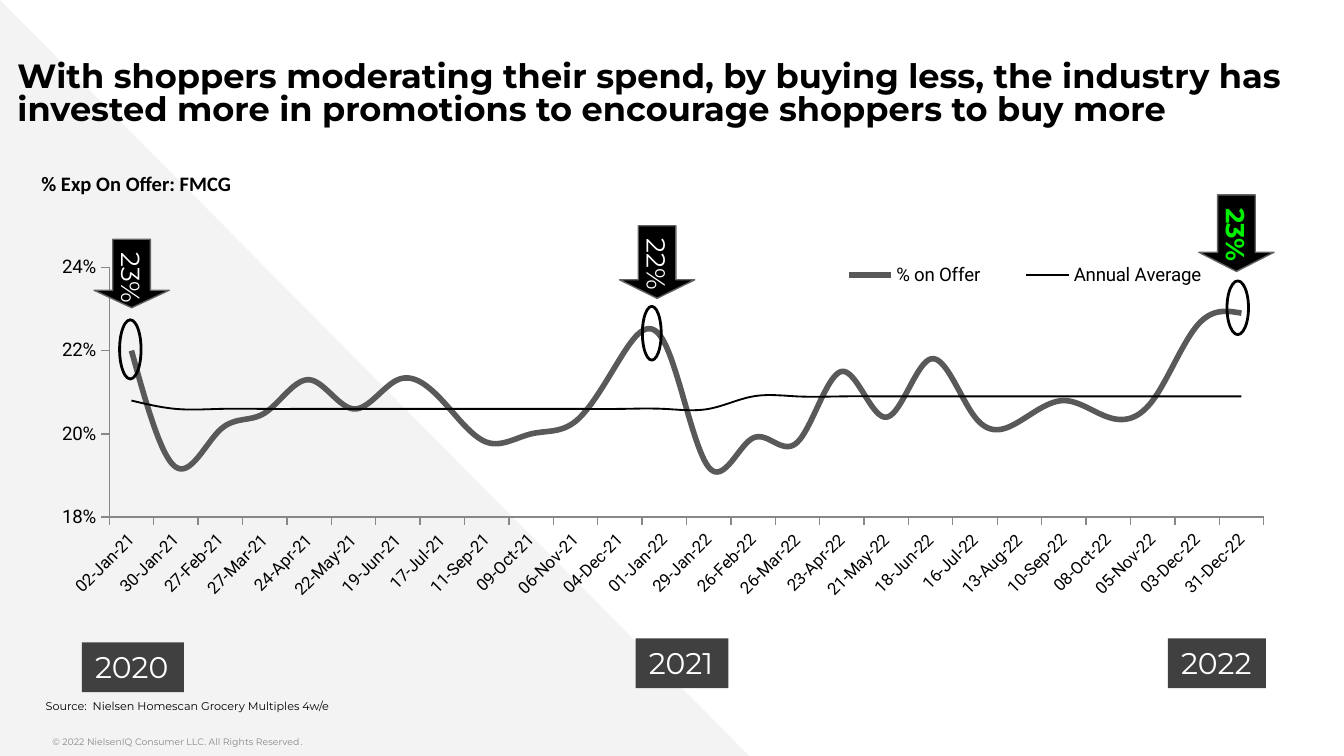
from lxml import etree
from pptx import Presentation
from pptx import util as u
from pptx.chart import data as cd
from pptx.dml.color import RGBColor
from pptx.enum import chart as ch, shapes as sh, text as tx
from pptx.oxml import ns

HUES = {"black": "000000", "white": "FFFFFF", "pale": "F3F3F3", "mute": "888888",
        "line": "595959", "edge": "616365", "tag": "404040", "green": "00F000"}
DATES = """02-Jan-21 30-Jan-21 27-Feb-21 27-Mar-21 24-Apr-21 22-May-21 19-Jun-21
17-Jul-21 11-Sep-21 09-Oct-21 06-Nov-21 04-Dec-21 01-Jan-22 29-Jan-22 26-Feb-22
26-Mar-22 23-Apr-22 21-May-22 18-Jun-22 16-Jul-22 13-Aug-22 10-Sep-22 08-Oct-22
05-Nov-22 03-Dec-22 31-Dec-22""".split()
OFFER = [0.22, 0.192, 0.201, 0.205, 0.213, 0.206, 0.213, 0.208, 0.198, 0.2, 0.203, 0.218, 0.222,
         0.192, 0.199, 0.198, 0.215, 0.204, 0.218, 0.204, 0.203, 0.208, 0.204, 0.208, 0.226, 0.229]
MEAN = [0.208] + [0.206] * 13 + [0.209] * 12


def hue(name):
    return RGBColor.from_string(HUES[name])


def style(font, size, face, color, bold=False):
    font.size, font.name, font.bold = u.Pt(size), face, bold
    font.color.rgb = hue(color)


def add_run(para, words, *look):
    run = para.add_run()
    run.text = words
    style(run.font, *look)


def add_text(slide, box, runs, pads=None, wrap=True, lead=None):
    frame = slide.shapes.add_textbox(*map(u.Inches, box)).text_frame
    frame.word_wrap = wrap
    if pads:
        frame.margin_left, frame.margin_top = map(u.Inches, pads)
        frame.margin_right, frame.margin_bottom = 0, u.Inches(pads[1])
    para = frame.paragraphs[0]
    if lead:
        para.line_spacing = lead
    for run in runs:
        add_run(para, *run)


def add_form(slide, kind, box, fill=None, edge=None, width=0.75):
    form = slide.shapes.add_shape(kind, *map(u.Inches, box))
    form.shadow.inherit = False
    if fill:
        form.fill.solid()
        form.fill.fore_color.rgb = hue(fill)
    else:
        form.fill.background()
    if edge:
        form.line.color.rgb = hue(edge)
        form.line.width = u.Pt(width)
    else:
        form.line.fill.background()
    return form


def add_arrow(slide, box, words, color, bold):
    form = add_form(slide, sh.MSO_SHAPE.DOWN_ARROW, box, "black", "edge")
    form.adjustments[0], form.adjustments[1] = 0.5, 0.255
    frame = form.text_frame
    frame.word_wrap = False
    frame.vertical_anchor = tx.MSO_ANCHOR.MIDDLE
    form.element.txBody.bodyPr.set("vert", "eaVert")
    para = frame.paragraphs[0]
    para.alignment = tx.PP_ALIGN.CENTER
    add_run(para, words, 14, "Montserrat", color, bold)


def add_year(slide, box, words):
    form = add_form(slide, sh.MSO_SHAPE.RECTANGLE, box, "tag")
    frame = form.text_frame
    frame.word_wrap = False
    frame.vertical_anchor = tx.MSO_ANCHOR.TOP
    para = frame.paragraphs[0]
    para.alignment = tx.PP_ALIGN.LEFT
    add_run(para, words, 16, "Montserrat", "white")


def set_plot(part, box, inner=False):
    old = part.find(ns.qn("c:layout"))
    if old is not None:
        part.remove(old)
    outer = etree.Element(ns.qn("c:layout"))
    form = etree.SubElement(outer, ns.qn("c:manualLayout"))
    items = [("layoutTarget", "inner")] if inner else []
    items += [("xMode", "edge"), ("yMode", "edge"), *zip("xywh", box)]
    for tag, val in items:
        etree.SubElement(form, ns.qn(f"c:{tag}")).set("val", str(val))
    if inner:
        part.insert(0, outer)
    else:
        part.find(ns.qn("c:legendPos")).addnext(outer)


def add_trend(slide, box):
    data = cd.CategoryChartData(number_format="0%")
    data.categories = DATES
    data.add_series("% on Offer", OFFER)
    data.add_series("Annual Average", MEAN)
    chart = slide.shapes.add_chart(ch.XL_CHART_TYPE.LINE, *map(u.Inches, box), data).chart
    style(chart.font, 18, "Arial", "black")
    chart.has_title = False
    plot = chart.plots[0]
    plot.vary_by_categories = False
    for row, color, width in zip(plot.series, ("line", "black"), (3, 1)):
        row.smooth = True
        row.marker.style = ch.XL_MARKER_STYLE.NONE
        row.format.line.color.rgb = hue(color)
        row.format.line.width = u.Pt(width)
    for axis, size in ((chart.category_axis, 9), (chart.value_axis, 10)):
        axis.has_major_gridlines = False
        axis.major_tick_mark = ch.XL_TICK_MARK.OUTSIDE
        axis.minor_tick_mark = ch.XL_TICK_MARK.NONE
        axis.tick_label_position = ch.XL_TICK_LABEL_POSITION.LOW
        axis.format.line.color.rgb = hue("mute")
        style(axis.tick_labels.font, size, "Roboto", "black")
    dates, rates = chart.category_axis, chart.value_axis
    dates._element.txPr.find(ns.qn("a:bodyPr")).set("rot", "-2700000")
    rates.minimum_scale, rates.maximum_scale, rates.major_unit = 0.18, 0.24, 0.02
    rates.tick_labels.number_format = "0%"
    rates.tick_labels.number_format_is_linked = False
    chart.has_legend = True
    key = chart.legend
    key.position = ch.XL_LEGEND_POSITION.RIGHT
    key.include_in_layout = False
    style(key.font, 10, "Roboto", "black")
    set_plot(chart.element.chart.plotArea, (0.049, 0.043, 0.909, 0.572), True)
    set_plot(key._element, (0.6, 0.02, 0.34, 0.08))


def add_back(slide):
    add_form(slide, sh.MSO_SHAPE.RIGHT_TRIANGLE, (0, 0, 5.59, 5.64), "pale")
    add_text(slide, (0.39, 5.43, 5.54, 0.2),
             [("© 2022 NielsenIQ Consumer LLC. All Rights Reserved", 5, "Montserrat", "mute"),
              (".", 5, "Roboto", "mute")], (0, 0.05))


def add_marks(slide):
    for box, words, color, bold in (((8.92, 1.45, 0.56, 0.57), "23%", "green", True),
                                    ((0.7, 1.78, 0.56, 0.51), "23%", "white", False),
                                    ((4.61, 1.68, 0.56, 0.54), "22%", "white", False)):
        add_arrow(slide, box, words, color, bold)
    for box in ((0.89, 2.38, 0.16, 0.44), (4.78, 2.28, 0.14, 0.4), (9.13, 2.09, 0.16, 0.4)):
        add_form(slide, sh.MSO_SHAPE.OVAL, box, None, "black", 1.5)
    for box, year in (((0.61, 4.78, 0.76, 0.37), "2020"), ((4.73, 4.75, 0.69, 0.37), "2021"),
                      ((8.69, 4.75, 0.73, 0.37), "2022")):
        add_year(slide, box, year)


def main():
    deck = Presentation()
    wide = u.Inches(10)
    deck.slide_width, deck.slide_height = wide, wide * 9 // 16
    slide = deck.slides.add_slide(deck.slide_layouts[6])
    add_back(slide)
    add_trend(slide, (0.35, 1.85, 9.45, 3.25))
    add_text(slide, (0.22, 5.15, 5, 0.57),
             [("Source:  Nielsen Homescan Grocery Multiples 4w/e", 6, "Montserrat", "black")],
             (0.12, 0.16))
    add_text(slide, (0.13, 0.37, 9.81, 0.69),
             [("With shoppers moderating their spend, by buying less, the industry has invested "
               "more in promotions to encourage shoppers to buy more",
               18, "Montserrat", "black", True)], (0, 0.1), lead=0.8)
    add_text(slide, (0.21, 1.22, 1.67, 0.29),
             [("% Exp On Offer: FMCG", 11, "Calibri", "black", True)], wrap=False)
    add_marks(slide)
    deck.save("out.pptx")


if __name__ == "__main__":
    main()
